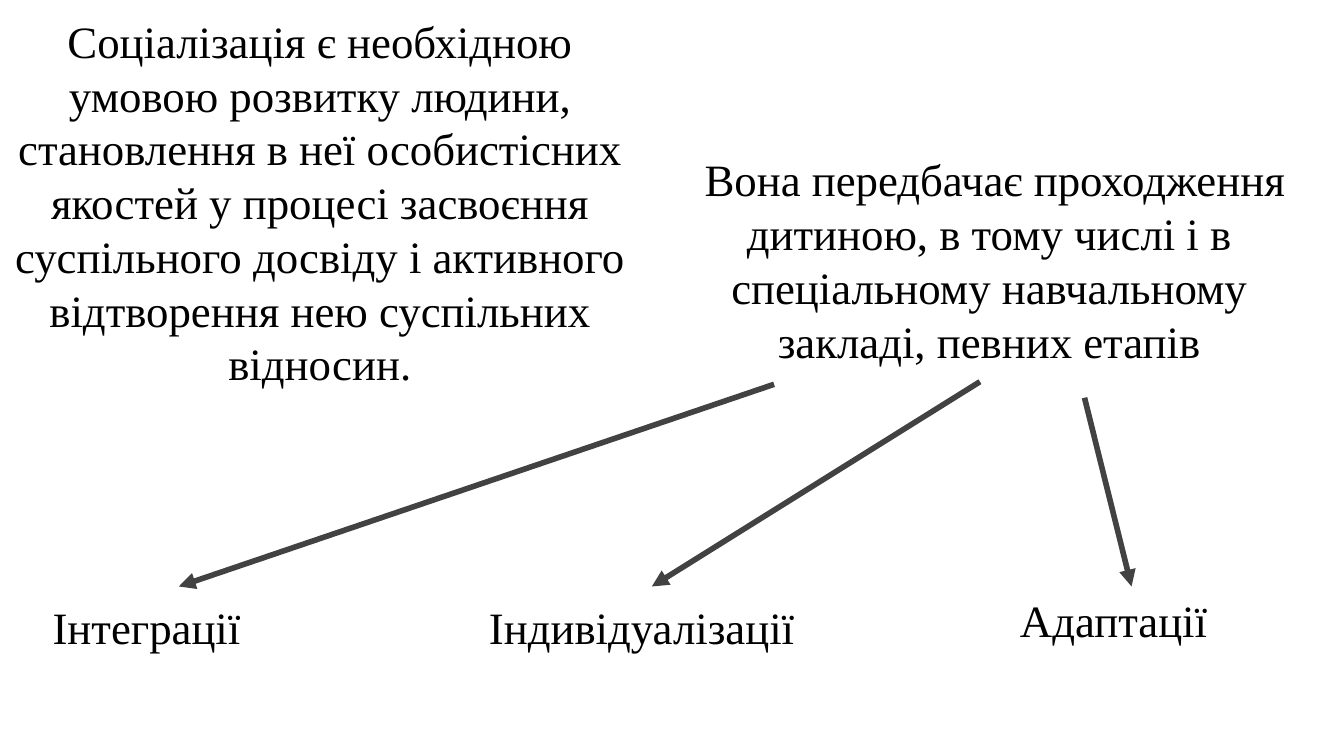
from lxml import etree
from pptx import Presentation
from pptx.dml.color import RGBColor
from pptx.enum.shapes import MSO_CONNECTOR
from pptx.enum.text import MSO_ANCHOR, MSO_AUTO_SIZE, PP_ALIGN
from pptx.oxml.ns import qn
from pptx.util import Pt

CENTER, LEFT = PP_ALIGN.CENTER, PP_ALIGN.LEFT
TOP = MSO_ANCHOR.TOP
NO_AUTOFIT = MSO_AUTO_SIZE.NONE
STRAIGHT = MSO_CONNECTOR.STRAIGHT
TITLE_ONLY = 5

COLORS = {"text": "000000", "arrow": "424242"}
FONT = "Times New Roman"
FONT_SIZE = 24
LINE_HEIGHT = 28.8
INSET = 7.2

# Text and box (left, top, width, height) in points
DEFINITION = (
    "Соціалізація є необхідною умовою розвитку людини, становлення в неї "
    "особистісних якостей у процесі засвоєння суспільного досвіду і активного "
    "відтворення нею суспільних відносин.",
    (0, 0, 342.7, 143.3),
)
STAGES_INTRO = (
    " Вона передбачає проходження дитиною, в тому числі і в спеціальному "
    "навчальному закладі, певних етапів",
    (352.1, 74.2, 355.7, 236.2),
)
# Each stage: text, box, arrow start, arrow end
STAGES = [
    (" Інтеграції", (15.1, 313.9, 161.3, 73.4), (414.7, 205.9), (95.8, 314.2)),
    ("Індивідуалізації", (254.9, 313.9, 190.1, 64.1), (525, 204.5), (349.2, 314.2)),
    ("Адаптації", (539.3, 310.3, 145.4, 56.2), (581, 213.1), (606.2, 314.2)),
]


def fill_text(shape, text, box, alignment):
    shape.left, shape.top, shape.width, shape.height = map(Pt, box)
    frame = shape.text_frame
    frame.word_wrap = True
    frame.auto_size = NO_AUTOFIT
    frame.vertical_anchor = TOP
    frame.margin_left = frame.margin_right = Pt(INSET)
    frame.margin_top = frame.margin_bottom = Pt(INSET)
    paragraph = frame.paragraphs[0]
    paragraph.text = text
    paragraph.alignment = alignment
    paragraph.line_spacing = Pt(LINE_HEIGHT)
    paragraph.font.name = FONT
    paragraph.font.size = Pt(FONT_SIZE)
    paragraph.font.color.rgb = RGBColor.from_string(COLORS["text"])


def add_text(slide, text, box, alignment):
    fill_text(slide.shapes.add_textbox(*map(Pt, box)), text, box, alignment)


def add_arrow(slide, start, end):
    arrow = slide.shapes.add_connector(STRAIGHT, *map(Pt, start + end))
    arrow.line.color.rgb = RGBColor.from_string(COLORS["arrow"])
    arrow.line.width = Pt(3)
    properties = arrow._element.spPr
    etree.SubElement(properties.find(qn("a:ln")), qn("a:tailEnd"), type="triangle")
    etree.SubElement(properties, qn("a:effectLst"))


def main():
    presentation = Presentation()
    presentation.slide_width = Pt(720)
    presentation.slide_height = Pt(405)
    slide = presentation.slides.add_slide(presentation.slide_layouts[TITLE_ONLY])

    fill_text(slide.shapes.title, *DEFINITION, CENTER)
    add_text(slide, *STAGES_INTRO, CENTER)
    for text, box, start, end in STAGES:
        add_text(slide, text, box, LEFT)
        add_arrow(slide, start, end)

    presentation.save("out.pptx")


if __name__ == "__main__":
    main()
